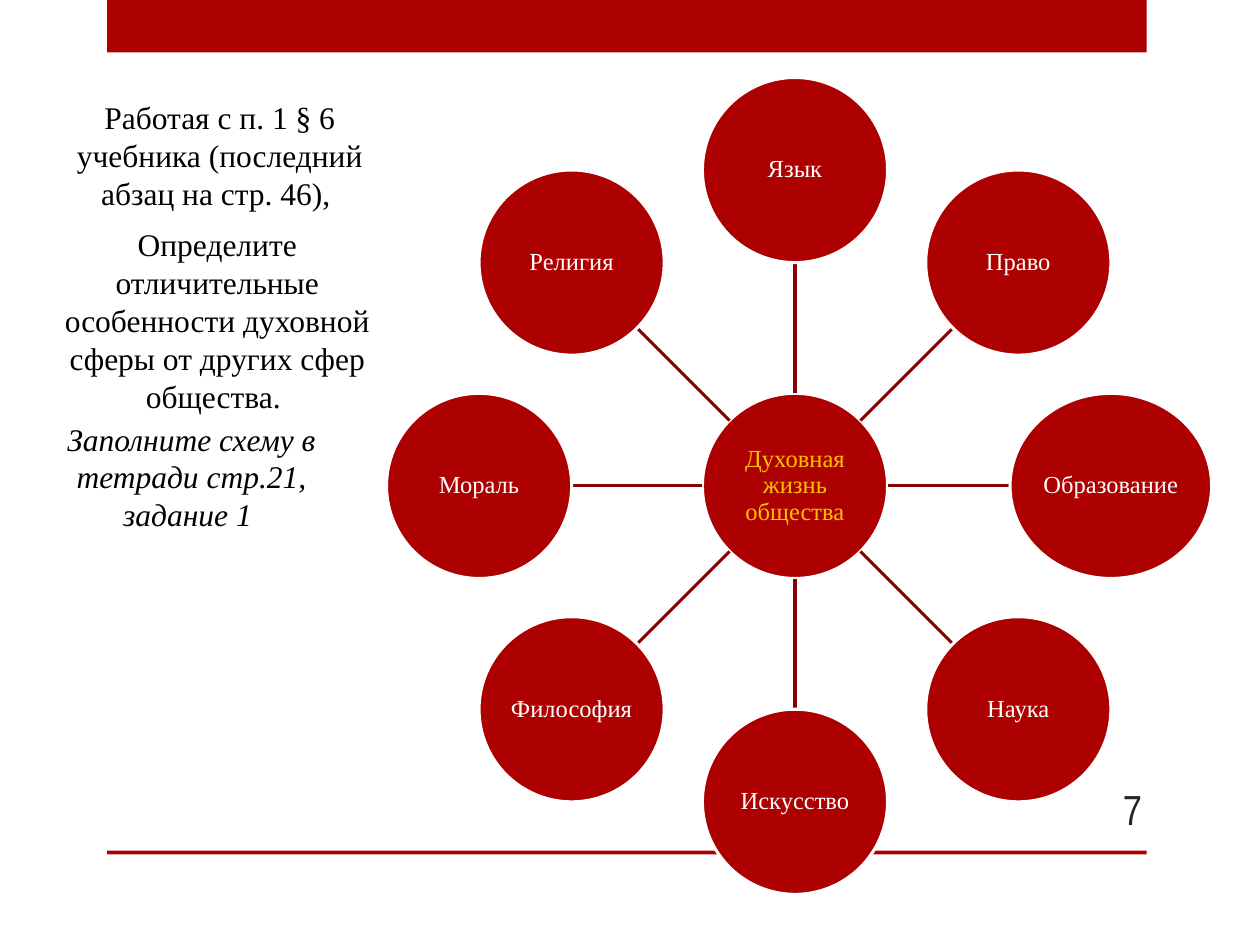
from math import cos, sin, radians

from lxml import etree
from pptx import Presentation
from pptx.dml.color import RGBColor
from pptx.enum.shapes import MSO_CONNECTOR, MSO_SHAPE
from pptx.enum.text import MSO_ANCHOR, PP_ALIGN
from pptx.oxml.ns import qn
from pptx.util import Pt

RED = RGBColor(0xAD, 0x01, 0x01)
DARK_RED = RGBColor(0x8B, 0x01, 0x01)
GOLD = RGBColor(0xFF, 0xC0, 0x00)
WHITE = RGBColor(0xFF, 0xFF, 0xFF)
BLACK = RGBColor(0, 0, 0)
GREY = RGBColor(0x26, 0x26, 0x26)

SERIF = "Times New Roman"
NODE = 105.8
WIDE = 115.2
SPHERES = ["Язык", "Право", "Образование", "Наука",
           "Искусство", "Философия", "Мораль", "Религия"]
TASKS = [
    ((15.8, 52.6, 219.6, 72.7), False,
     "Работая с п. 1 § 6 учебника (последний абзац на стр. 46), "),
    ((13.7, 125.3, 221, 94.3), False,
     "Определите отличительные особенности духовной сферы от других сфер общества. "),
    ((25.2, 236.2, 168.5, 72.7), True,
     "Заполните схему в тетради стр.21, задание 1 "),
]


def write(shape, text, size, color, font=SERIF, align=PP_ALIGN.CENTER,
          anchor=MSO_ANCHOR.TOP, italic=False):
    frame = shape.text_frame
    frame.word_wrap = True
    frame.vertical_anchor = anchor
    para = frame.paragraphs[0]
    para.alignment = align
    run = para.add_run()
    run.text = text
    for name, value in {"name": font, "size": Pt(size), "italic": italic}.items():
        setattr(run.font, name, value)
    run.font.color.rgb = color


def add_text(slide, box, text, size, color, **style):
    shape = slide.shapes.add_textbox(*map(Pt, box))
    write(shape, text, size, color, **style)


def add_bar(slide, box):
    bar = slide.shapes.add_shape(MSO_SHAPE.RECTANGLE, *map(Pt, box))
    bar.shadow.inherit = False
    bar.fill.solid()
    bar.fill.fore_color.rgb = RED
    bar.line.fill.background()


def add_node(slide, x, y, width, text, color):
    """Place a circle centred on x, y."""
    node = slide.shapes.add_shape(
        MSO_SHAPE.OVAL, Pt(x - width / 2), Pt(y - NODE / 2), Pt(width), Pt(NODE))
    node.shadow.inherit = False
    node.fill.solid()
    node.fill.fore_color.rgb = RED
    node.line.color.rgb = WHITE
    node.line.width = Pt(1.75)
    write(node, text, 14, color, anchor=MSO_ANCHOR.MIDDLE)
    for side in ("left", "right", "top", "bottom"):
        setattr(node.text_frame, f"margin_{side}", Pt(0.7))
    node.text_frame.paragraphs[0].line_spacing = 0.9


def add_spoke(slide, start, end):
    spoke = slide.shapes.add_connector(
        MSO_CONNECTOR.STRAIGHT, *map(Pt, (*start, *end)))
    spoke.line.color.rgb = DARK_RED
    spoke.line.width = Pt(1.75)
    etree.SubElement(spoke._element.spPr, qn("a:effectLst"))


def add_wheel(slide, box, hub, names):
    """Set the names clockwise from the top around the hub."""
    left, top, width, height = box
    x, y = left + width / 2, top + height / 2
    reach = (height - NODE) / 2

    def polar(angle, dist):
        return x + dist * cos(angle), y + dist * sin(angle)

    add_node(slide, x, y, NODE, hub, GOLD)
    for i, name in enumerate(names):
        angle = radians(360 * i / len(names) - 90)
        size = WIDE if name == "Образование" else NODE
        add_spoke(slide, polar(angle, NODE / 2), polar(angle, reach - size / 2))
        add_node(slide, *polar(angle, reach), size, name, WHITE)


def add_frame(slide, box, number):
    """Draw the top band, the bottom rule and the slide number."""
    left, top, width, height = box
    add_bar(slide, (left, top, width, 30))
    add_bar(slide, (left, top + height - 2.3, width, 2.3))
    add_text(slide, (left + width - 55.4, top + height - 40.5, 59.8, 28.8),
             number, 24, GREY, font="Arial Narrow", align=PP_ALIGN.RIGHT,
             anchor=MSO_ANCHOR.MIDDLE)


def add_tasks(slide, tasks):
    for box, italic, text in tasks:
        add_text(slide, box, text, 18, BLACK, italic=italic)


def main():
    deck = Presentation()
    deck.slide_width, deck.slide_height = Pt(720), Pt(540)
    slide = deck.slides.add_slide(deck.slide_layouts[6])
    add_frame(slide, (61.2, 0, 594, 488.3), "7")
    add_wheel(slide, (220.9, 44.3, 466.8, 466.8),
              "Духовная жизнь общества", SPHERES)
    add_tasks(slide, TASKS)
    deck.save("out.pptx")


if __name__ == "__main__":
    main()
